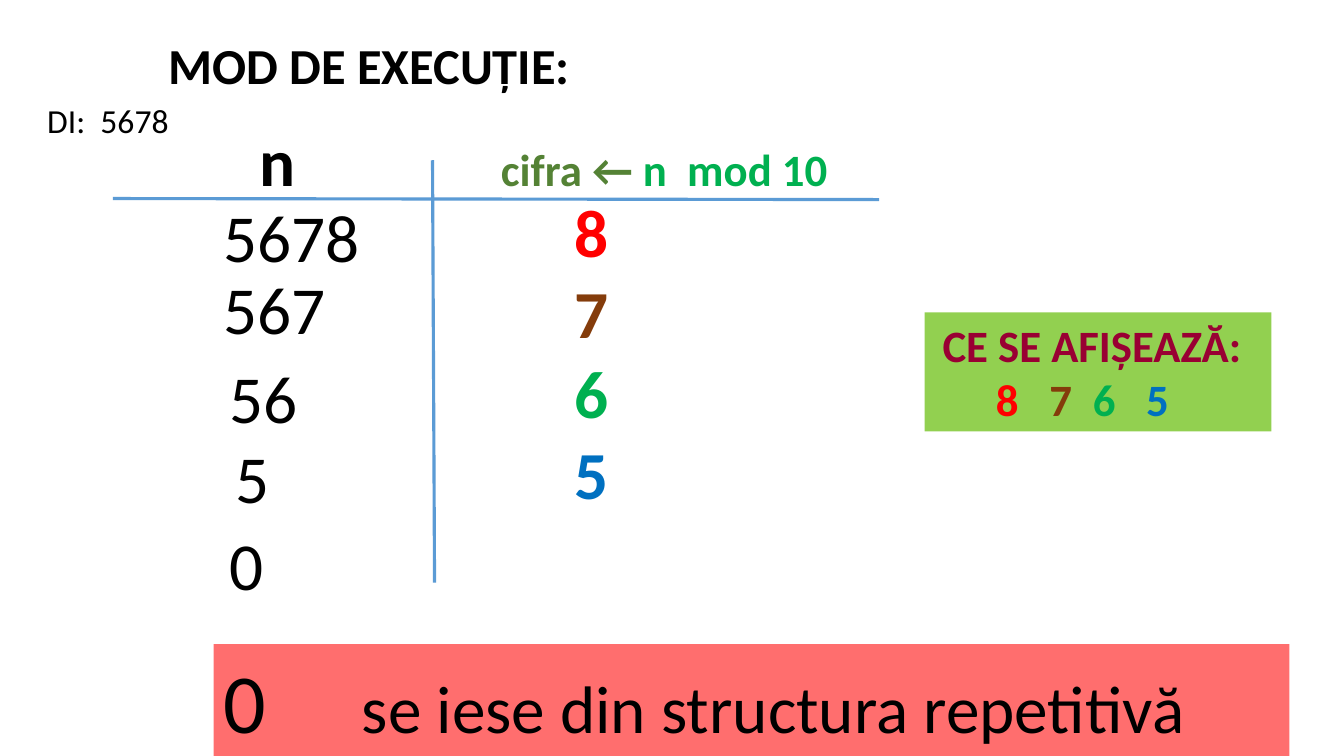
"""Build the slide that traces the digits of 5678 taken by repeated mod 10."""
from lxml import etree
from pptx import Presentation
from pptx import util as u
from pptx.dml.color import RGBColor
from pptx.enum import shapes, text
from pptx.oxml.ns import qn

RED, BROWN, GREEN, BLUE = "FF0000", "843C0B", "00B050", "0070C0"
DIGITS = [("8", RED), ("7", BROWN), ("6", GREEN), ("5", BLUE)]


def color(value):
    return RGBColor.from_string(value)


def add_span(para, words, size=48, ink="000000", bold=False, face="Calibri"):
    span = para.add_run()
    span.text = words
    span.font.name = face
    span.font.size = u.Pt(size)
    span.font.bold = bold
    span.font.color.rgb = color(ink)


def set_tabs(para, stops):
    tabs = etree.SubElement(para._p.get_or_add_pPr(), qn("a:tabLst"))
    for stop in stops:
        etree.SubElement(tabs, qn("a:tab"), pos=str(u.Inches(stop)), algn="l")


class Slide:
    def __init__(self, deck):
        self.page = deck.slides.add_slide(deck.slide_layouts[6])
        self.line_color = "5B9BD5"
        self.line_width = u.Pt(2.25)

    def label(self, place, *spans, **style):
        box = self.page.shapes.add_textbox(*map(u.Inches, place))
        box.text_frame.word_wrap = True
        for words, ink in spans:
            add_span(box.text_frame.paragraphs[0], words, ink=ink, **style)
        return box.text_frame

    def panel(self, place, fill, opacity=100):
        box = self.page.shapes.add_shape(
            shapes.MSO_SHAPE.RECTANGLE, *map(u.Inches, place))
        box.shadow.inherit = False
        box.line.fill.background()
        box.fill.solid()
        box.fill.fore_color.rgb = color(fill)
        if opacity < 100:
            tint = box._element.spPr.find(".//" + qn("a:srgbClr"))
            etree.SubElement(tint, qn("a:alpha"), val=str(opacity * 1000))
        frame = box.text_frame
        frame.word_wrap = True
        frame.vertical_anchor = text.MSO_ANCHOR.TOP
        frame.paragraphs[0].alignment = text.PP_ALIGN.LEFT
        return frame

    def rule(self, *ends):
        line = self.page.shapes.add_connector(
            shapes.MSO_CONNECTOR.STRAIGHT, *map(u.Inches, ends))
        line.line.color.rgb = color(self.line_color)
        line.line.width = self.line_width
        etree.SubElement(line._element.spPr, qn("a:effectLst"))


def main():
    deck = Presentation()
    deck.slide_width, deck.slide_height = u.Inches(13.33), u.Inches(7.5)
    slide = Slide(deck)
    black = "000000"

    steps = [("5678", 2.12, 1.89), ("567", 2.12, 2.6), ("56", 2.18, 3.49),
             ("5", 2.24, 4.28), ("0", 2.18, 5.14)]
    for number, left, top in steps:
        slide.label((left, top, 5.37, 0.91), (number, black))

    ending = slide.panel((2.12, 6.39, 10.67, 1.11), RED, 57).paragraphs[0]
    set_tabs(ending, [1.37])
    add_span(ending, "0\t", size=60)
    add_span(ending, "se iese din structura repetitivă")

    column = slide.label((5.6, 1.84, 0.69, 3.33))
    for index, (digit, ink) in enumerate(DIGITS):
        para = column.add_paragraph() if index else column.paragraphs[0]
        add_span(para, digit, ink=ink, bold=True)

    output = slide.panel((9.17, 3.1, 3.44, 1.18), "92D050")
    heading, shown = output.paragraphs[0], output.add_paragraph()
    set_tabs(heading, [0.08])
    add_span(heading, "\tCE SE AFIȘEAZĂ:", size=32, ink="990033", bold=True)
    shown.alignment = text.PP_ALIGN.LEFT
    set_tabs(shown, [0.61, 1.14, 1.57, 2.1])
    for digit, ink in DIGITS:
        add_span(shown, "\t" + digit, size=32, ink=ink, bold=True)

    slide.rule(1.12, 1.97, 8.72, 1.98)
    slide.rule(4.29, 1.59, 4.31, 5.78)

    slide.label((2.48, 1.13, 1.27, 0.91), ("n", black), bold=True)
    slide.label((1.57, 0.29, 4.22, 0.71), ("MOD DE EXECUȚIE:", black),
                size=36, bold=True)
    slide.label((4.87, 1.36, 3.65, 0.64), ("cifra ← ", "548235"),
                ("n  mod 10", GREEN), size=32, bold=True)
    slide.label((0.37, 0.94, 1.5, 0.5), ("DI:  5678", black), size=24)

    deck.save("out.pptx")


if __name__ == "__main__":
    main()
